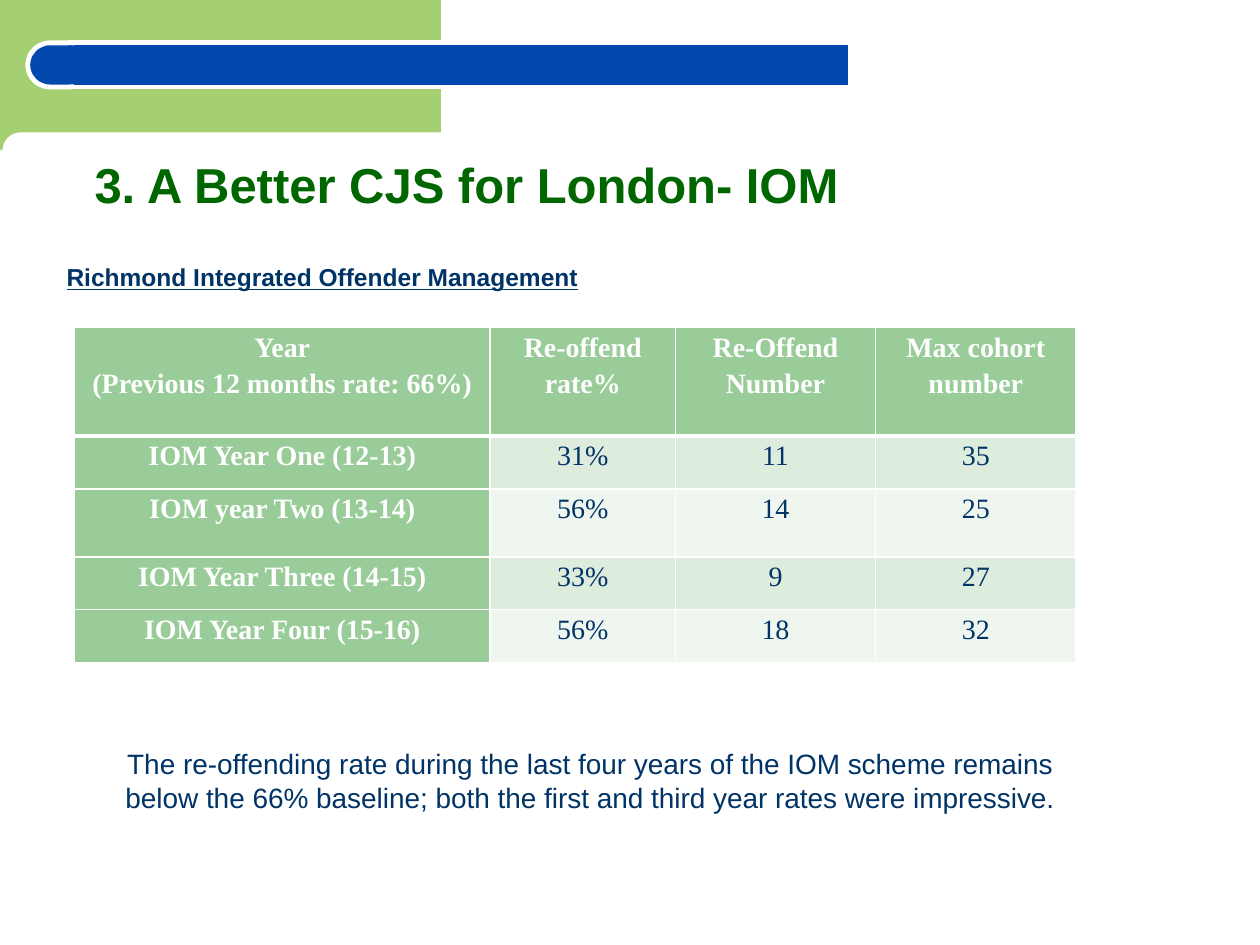
from lxml import etree
from pptx import Presentation
from pptx.dml.color import RGBColor
from pptx.enum.shapes import MSO_CONNECTOR, MSO_SHAPE
from pptx.enum.text import MSO_ANCHOR, MSO_AUTO_SIZE, PP_ALIGN
from pptx.oxml.ns import qn
from pptx.util import Inches, Pt

RECTANGLE = MSO_SHAPE.RECTANGLE
ROUNDED = MSO_SHAPE.ROUNDED_RECTANGLE
DELAY = MSO_SHAPE.FLOWCHART_DELAY
STRAIGHT = MSO_CONNECTOR.STRAIGHT
LEFT, CENTER = PP_ALIGN.LEFT, PP_ALIGN.CENTER
TOP = MSO_ANCHOR.TOP
FIXED = MSO_AUTO_SIZE.NONE

COLUMNS, ROWS = 100, 75
SLIDE_WIDTH, SLIDE_HEIGHT = Inches(10), Inches(7.5)
TITLE_LAYOUT = 5

WHITE, LIME, BLUE = "FFFFFF", "A5D072", "0248AE"
NAVY, GREEN, SAGE = "003366", "006600", "99CC99"
BANDS = ["DEECDE", "EFF6EF"]

TITLE_FONT = {"name": "Arial", "size": Pt(28), "bold": True}
HEADING_FONT = {"name": "Arial", "size": Pt(14), "bold": True, "underline": True}
NOTE_FONT = {"name": "Arial", "size": Pt(16)}
TABLE_FONT = {"name": "Times New Roman", "size": Pt(16)}
CELL_FORMAT = {
    "margin_left": Inches(0.07),
    "margin_right": Inches(0.07),
    "margin_top": 0,
    "margin_bottom": 0,
    "vertical_anchor": TOP,
}

COLUMN_WIDTHS = [33, 14.7, 15.9, 15.9]
ROW_HEIGHTS = [8.6, 4.2, 5.4, 4.2, 4.2]
TABLE_ROWS = [
    ["Year\n(Previous 12 months rate: 66%)", "Re-offend rate%",
     "Re-Offend Number", "Max cohort number"],
    ["IOM Year One (12-13)", "31%", "11", "35"],
    ["IOM year Two (13-14)", "56%", "14", "25"],
    ["IOM Year Three (14-15)", "33%", "9", "27"],
    ["IOM Year Four (15-16)", "56%", "18", "32"],
]


def color(value):
    return RGBColor.from_string(value)


def across(columns):
    return round(SLIDE_WIDTH * columns / COLUMNS)


def down(rows):
    return round(SLIDE_HEIGHT * rows / ROWS)


def area(left, top, width, height):
    return across(left), down(top), across(width), down(height)


def set_values(target, values):
    for name, value in values.items():
        setattr(target, name, value)


def format_text(frame, font, text_color, align, spacing=1.0):
    for paragraph in frame.paragraphs:
        paragraph.alignment = align
        paragraph.line_spacing = spacing
        set_values(paragraph.font, font)
        paragraph.font.color.rgb = color(text_color)


def add_block(slide, kind, place, fill, outline=None):
    shape = slide.shapes.add_shape(kind, *area(*place))
    shape.shadow.inherit = False
    shape.fill.solid()
    shape.fill.fore_color.rgb = color(fill)
    if outline:
        shape.line.color.rgb = color(outline)
        shape.line.width = Pt(2.75)
    else:
        shape.line.fill.background()
    return shape


def add_banner(slide):
    add_block(slide, RECTANGLE, (0, 0, 8.3, 75), LIME)
    add_block(slide, RECTANGLE, (7.5, 0, 27.5, 11.7), LIME)
    curve = add_block(slide, ROUNDED, (0.2, 10.5, 55.8, 2.9), WHITE)
    curve.adjustments[0] = 0.5
    add_block(slide, RECTANGLE, (5.5, 3.4, 62, 3.5), BLUE, WHITE)
    cap = add_block(slide, DELAY, (2.2, 3.4, 3.5, 3.5), BLUE, WHITE)
    cap.rotation = 180
    seam = slide.shapes.add_connector(
        STRAIGHT, across(5.9), down(3.6), across(5.8), down(6.7))
    seam.line.color.rgb = color(BLUE)
    seam.line.width = Pt(6)
    etree.SubElement(seam._element.spPr, qn("a:effectLst"))
    add_block(slide, RECTANGLE, (0, 11.9, 9, 63.1), WHITE)


def add_title(slide, text):
    title = slide.shapes.title
    title.left, title.top, title.width, title.height = area(4.3, 12.3, 90, 12.5)
    frame = title.text_frame
    frame.text = text
    set_values(frame, {"auto_size": FIXED, "vertical_anchor": TOP,
                       "word_wrap": True, "margin_left": across(3.2)})
    format_text(frame, TITLE_FONT, GREEN, LEFT, 0.9)
    slide.shapes._spTree.append(title._element)


def add_text(slide, place, text, font, align):
    frame = slide.shapes.add_textbox(*area(*place)).text_frame
    frame.word_wrap = True
    frame.text = text
    format_text(frame, font, NAVY, align)


def add_borders(cell, widths):
    properties = cell._tc.get_or_add_tcPr()
    for index, (side, width) in enumerate(widths.items()):
        line = etree.Element(qn("a:" + side), w=str(Pt(width)))
        fill = etree.SubElement(line, qn("a:solidFill"))
        etree.SubElement(fill, qn("a:srgbClr"), val=WHITE)
        properties.insert(index, line)


def format_cell(cell, text, row, column):
    heading = row == 0 or column == 0
    cell.text = text
    set_values(cell, CELL_FORMAT)
    cell.fill.solid()
    cell.fill.fore_color.rgb = color(SAGE if heading else BANDS[(row - 1) % 2])
    format_text(cell.text_frame, {**TABLE_FONT, "bold": heading},
                WHITE if heading else NAVY, CENTER, 1.15)
    add_borders(cell, {"lnL": 1, "lnR": 1, "lnT": 3 if row == 1 else 1,
                       "lnB": 3 if row == 0 else 1})


def add_rates_table(slide):
    place = area(5.9, 26, sum(COLUMN_WIDTHS), sum(ROW_HEIGHTS))
    table = slide.shapes.add_table(
        len(ROW_HEIGHTS), len(COLUMN_WIDTHS), *place).table
    for column, width in zip(table.columns, COLUMN_WIDTHS):
        column.width = across(width)
    for row, height in zip(table.rows, ROW_HEIGHTS):
        row.height = down(height)
    for row, texts in enumerate(TABLE_ROWS):
        for column, text in enumerate(texts):
            format_cell(table.cell(row, column), text, row, column)


def main():
    presentation = Presentation()
    presentation.slide_width = SLIDE_WIDTH
    presentation.slide_height = SLIDE_HEIGHT
    slide = presentation.slides.add_slide(
        presentation.slide_layouts[TITLE_LAYOUT])
    add_banner(slide)
    add_title(slide, "3. A Better CJS for London- IOM")
    add_rates_table(slide)
    add_text(slide, (4.3, 20.3, 43.3, 6.4),
             "Richmond Integrated Offender Management", HEADING_FONT, LEFT)
    add_text(slide, (6.3, 58.8, 81.1, 6.4),
             "The re-offending rate during the last four years of the IOM scheme "
             "remains below the 66% baseline; both the first and third year rates "
             "were impressive.", NOTE_FONT, CENTER)
    presentation.save("out.pptx")


if __name__ == "__main__":
    main()
